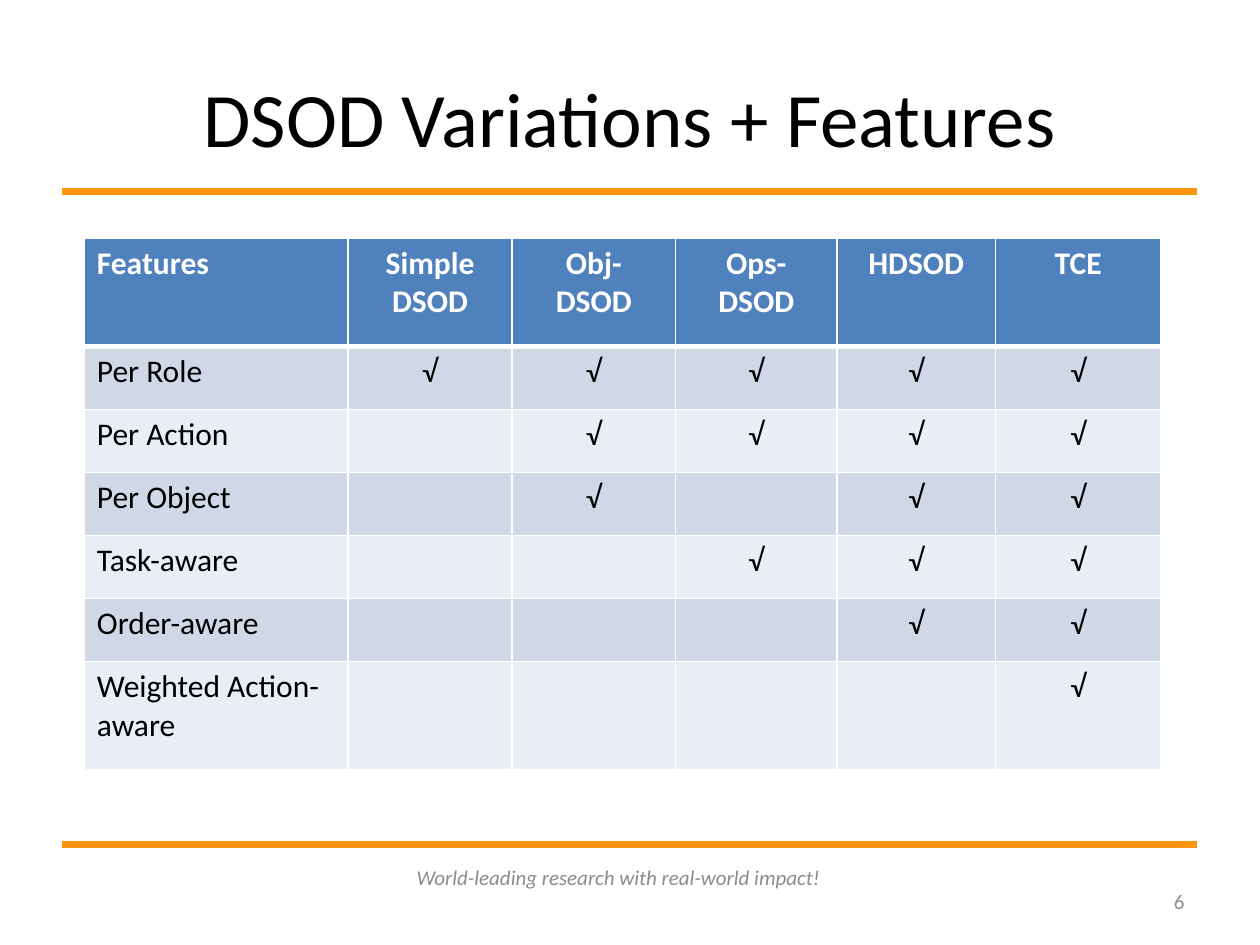
from lxml.etree import SubElement
from pptx import Presentation
from pptx.dml.color import RGBColor
from pptx.enum.shapes import MSO_CONNECTOR
from pptx.enum.text import MSO_ANCHOR, PP_ALIGN
from pptx.oxml.ns import qn
from pptx.util import Cm, Pt

FONT = "Calibri"
BLACK, WHITE, GRAY, ORANGE = "000000", "FFFFFF", "8C8C8C", "FF950E"
HEADER_FILL = "4F81BD"
BAND_FILLS = ("D0D8E8", "E9EDF4")

HEADINGS = ["Features", "Simple DSOD", "Obj-\nDSOD", "Ops-\nDSOD", "HDSOD", "TCE"]
# Each feature with the variations (by column) that support it
FEATURES = [
    ("Per Role", {1, 2, 3, 4, 5}),
    ("Per Action", {2, 3, 4, 5}),
    ("Per Object", {2, 4, 5}),
    ("Task-aware", {3, 4, 5}),
    ("Order-aware", {4, 5}),
    ("Weighted Action-aware", {5}),
]
COLUMN_WIDTHS = [5.32, 3.3, 3.3, 3.25, 3.2, 3.33]
ROW_HEIGHTS = [2.18] + [1.27] * 5 + [2.18]


def rgb(value):
    return RGBColor.from_string(value)


def write_text(frame, text, size, color, align, bold=False, italic=False):
    frame.text = text
    for para in frame.paragraphs:
        para.alignment = align
        for span in para.runs:
            font = span.font
            font.name, font.size = FONT, Pt(size)
            font.bold, font.italic = bold, italic
            font.color.rgb = rgb(color)


def add_text(page, text, left, top, width, height, size, color, align, italic=False):
    box = page.shapes.add_textbox(Cm(left), Cm(top), Cm(width), Cm(height))
    frame = box.text_frame
    frame.word_wrap = True
    frame.vertical_anchor = MSO_ANCHOR.MIDDLE
    write_text(frame, text, size, color, align, italic=italic)


def add_rule(page, top):
    """Draw an orange line across the page."""
    rule = page.shapes.add_connector(
        MSO_CONNECTOR.STRAIGHT, Cm(1.25), Cm(top), Cm(24.13), Cm(top))
    rule.line.color.rgb = rgb(ORANGE)
    rule.line.width = Pt(4.31)
    SubElement(rule._element.spPr, qn("a:effectLst"))


def set_borders(cell, top, bottom):
    """Give the cell white borders; top and bottom are widths in points."""
    properties = cell._tc.get_or_add_tcPr()
    for side, width in (("L", 1), ("R", 1), ("T", top), ("B", bottom)):
        line = SubElement(properties, qn(f"a:ln{side}"), w=str(Pt(width)))
        fill = SubElement(line, qn("a:solidFill"))
        SubElement(fill, qn("a:srgbClr"), val=WHITE)


def add_feature_table(page):
    rows = [HEADINGS] + [
        [name] + ["√" if column in marks else "" for column in range(1, len(HEADINGS))]
        for name, marks in FEATURES
    ]
    table = page.shapes.add_table(
        len(rows), len(HEADINGS), Cm(1.7), Cm(4.8),
        Cm(sum(COLUMN_WIDTHS)), Cm(sum(ROW_HEIGHTS))).table
    table.horz_banding = False
    for column, width in zip(table.columns, COLUMN_WIDTHS):
        column.width = Cm(width)
    for row, height in zip(table.rows, ROW_HEIGHTS):
        row.height = Cm(height)

    for r, texts in enumerate(rows):
        header = r == 0
        for c, text in enumerate(texts):
            cell = table.cell(r, c)
            set_borders(cell, top=3 if r == 1 else 1, bottom=3 if header else 1)
            cell.fill.solid()
            cell.fill.fore_color.rgb = rgb(HEADER_FILL if header else BAND_FILLS[(r - 1) % 2])
            write_text(cell.text_frame, text, 18, WHITE if header else BLACK,
                       PP_ALIGN.CENTER if c else PP_ALIGN.LEFT, bold=header)


def main():
    deck = Presentation()
    deck.slide_width, deck.slide_height = Cm(25.4), Cm(19.05)
    page = deck.slides.add_slide(deck.slide_layouts[6])
    for top in (3.86, 17.02):
        add_rule(page, top)
    add_text(page, "DSOD Variations + Features", 1.27, 0.76, 22.86, 3.18,
             44, BLACK, PP_ALIGN.CENTER)
    add_text(page, "World-leading research with real-world impact!", 7.87, 17.18, 9.2, 1.02,
             12, GRAY, PP_ALIGN.CENTER, italic=True)
    add_text(page, "6", 18.2, 17.66, 5.93, 1.02, 12, GRAY, PP_ALIGN.RIGHT)
    add_feature_table(page)
    deck.save("out.pptx")


if __name__ == "__main__":
    main()
